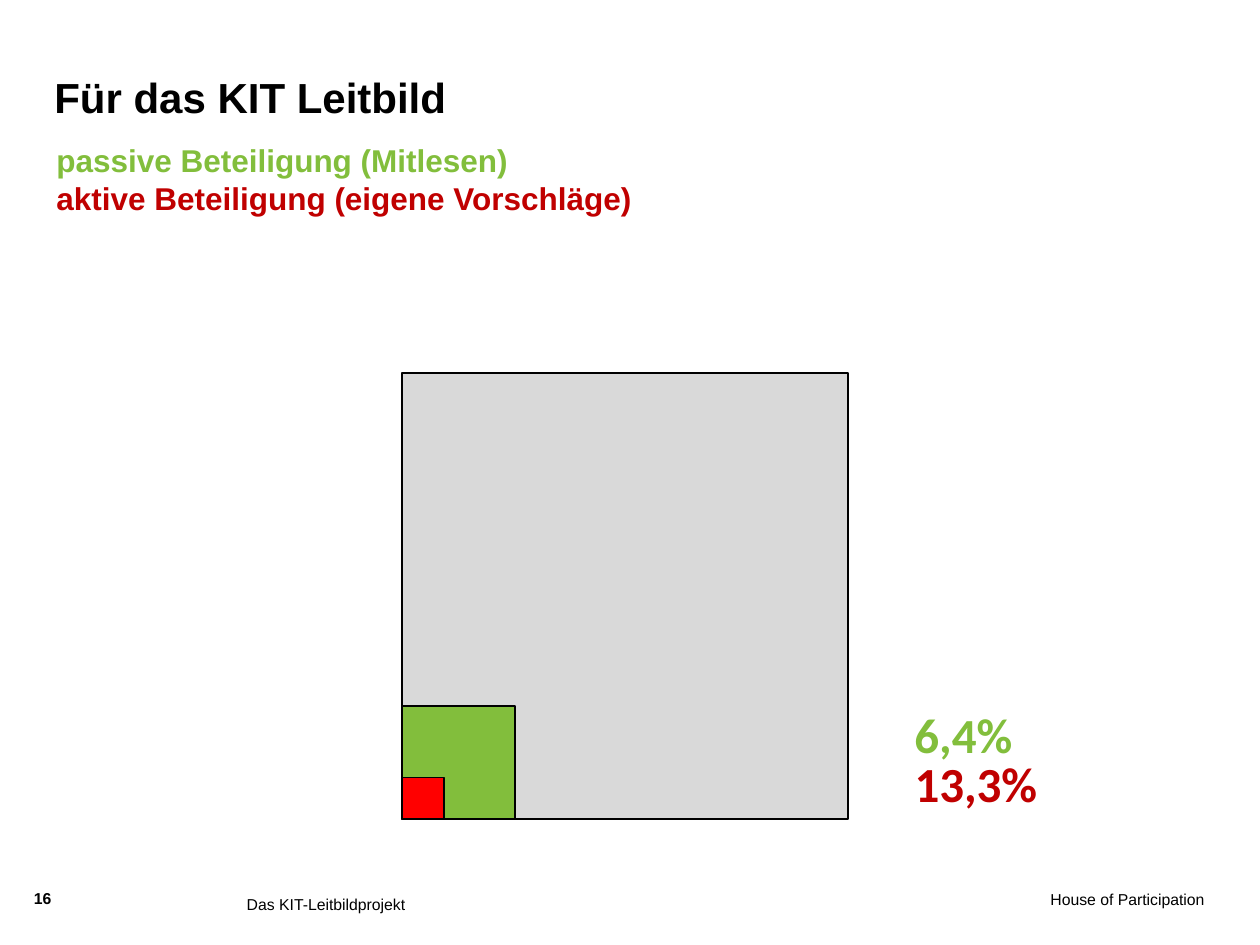
from dataclasses import dataclass

from pptx import Presentation
from pptx.dml.color import RGBColor
from pptx.enum.shapes import MSO_SHAPE
from pptx.enum.text import MSO_ANCHOR, MSO_AUTO_SIZE, PP_ALIGN
from pptx.util import Pt

RECTANGLE = MSO_SHAPE.RECTANGLE
BOTTOM, TOP = MSO_ANCHOR.BOTTOM, MSO_ANCHOR.TOP
NO_AUTOFIT = MSO_AUTO_SIZE.NONE
LEFT, RIGHT, JUSTIFY = PP_ALIGN.LEFT, PP_ALIGN.RIGHT, PP_ALIGN.JUSTIFY
TITLE_ONLY = 5

BLACK, GREY, GREEN = "000000", "D9D9D9", "82BE3C"
RED, DARK_RED = "FF0000", "C00000"

# All squares share the lower left corner
CORNER_X, CORNER_Y = 229.8, 468.2


@dataclass(frozen=True)
class Share:
    side: float
    color: str


@dataclass(frozen=True)
class Label:
    box: tuple[float, float, float, float]
    lines: tuple[tuple[str, str], ...]  # wording and colour
    size: float
    font: str = "Arial"
    bold: bool = True
    align: PP_ALIGN = LEFT
    inset: bool = True
    wrap: bool = True


SHARES = (Share(255, GREY), Share(64.6, GREEN), Share(23.8, RED))

TITLE = Label((31, 26, 544.3, 43.8), (("Für das KIT Leitbild", BLACK),), 24, inset=False)

LABELS = (
    # Legend
    Label((25.2, 77, 453.6, 51),
          (("passive Beteiligung (Mitlesen)", GREEN),
           ("aktive Beteiligung (eigene Vorschläge)", DARK_RED)), 18, align=JUSTIFY),
    # Percentages
    Label((515.5, 398.9, 79.2, 41), (("6,4%", GREEN),), 28, "Calibri", wrap=False),
    Label((515.5, 427, 95, 41), (("13,3%", DARK_RED),), 28, "Calibri", wrap=False),
    # Footer
    Label((19.4, 507.6, 25.9, 17.3), (("16", BLACK),), 9, inset=False),
    Label((133.9, 507.6, 334.8, 28), (("Das KIT-Leitbildprojekt", BLACK),), 9, bold=False),
    Label((473, 508.3, 215.3, 28), (("House of Participation", BLACK),), 9,
          bold=False, align=RIGHT, inset=False),
)


def rgb(color: str) -> RGBColor:
    return RGBColor.from_string(color)


def write_label(holder, label: Label, anchor: MSO_ANCHOR = TOP) -> None:
    frame = holder.text_frame
    frame.text = "\n".join(wording for wording, _ in label.lines)
    frame.word_wrap = label.wrap
    frame.auto_size = NO_AUTOFIT
    frame.vertical_anchor = anchor
    if not label.inset:
        frame.margin_left = frame.margin_right = Pt(0)
        frame.margin_top = frame.margin_bottom = Pt(0)
    for paragraph, (_, color) in zip(frame.paragraphs, label.lines):
        paragraph.alignment = label.align
        font = paragraph.runs[0].font
        font.name, font.size, font.bold = label.font, Pt(label.size), label.bold
        font.color.rgb = rgb(color)


def add_title(slide, label: Label) -> None:
    title = slide.shapes.title
    title.left, title.top, title.width, title.height = map(Pt, label.box)
    write_label(title, label, BOTTOM)


def add_label(slide, label: Label) -> None:
    write_label(slide.shapes.add_textbox(*map(Pt, label.box)), label)


def add_share(slide, share: Share) -> None:
    square = slide.shapes.add_shape(
        RECTANGLE, Pt(CORNER_X), Pt(CORNER_Y - share.side), Pt(share.side), Pt(share.side))
    square.shadow.inherit = False
    square.fill.solid()
    square.fill.fore_color.rgb = rgb(share.color)
    square.line.color.rgb = rgb(BLACK)
    square.line.width = Pt(1)


def main() -> None:
    deck = Presentation()
    deck.slide_width, deck.slide_height = Pt(720), Pt(540)
    slide = deck.slides.add_slide(deck.slide_layouts[TITLE_ONLY])

    add_title(slide, TITLE)
    # Nested squares, largest at the back
    for share in SHARES:
        add_share(slide, share)
    for label in LABELS:
        add_label(slide, label)

    deck.save("out.pptx")


if __name__ == "__main__":
    main()
